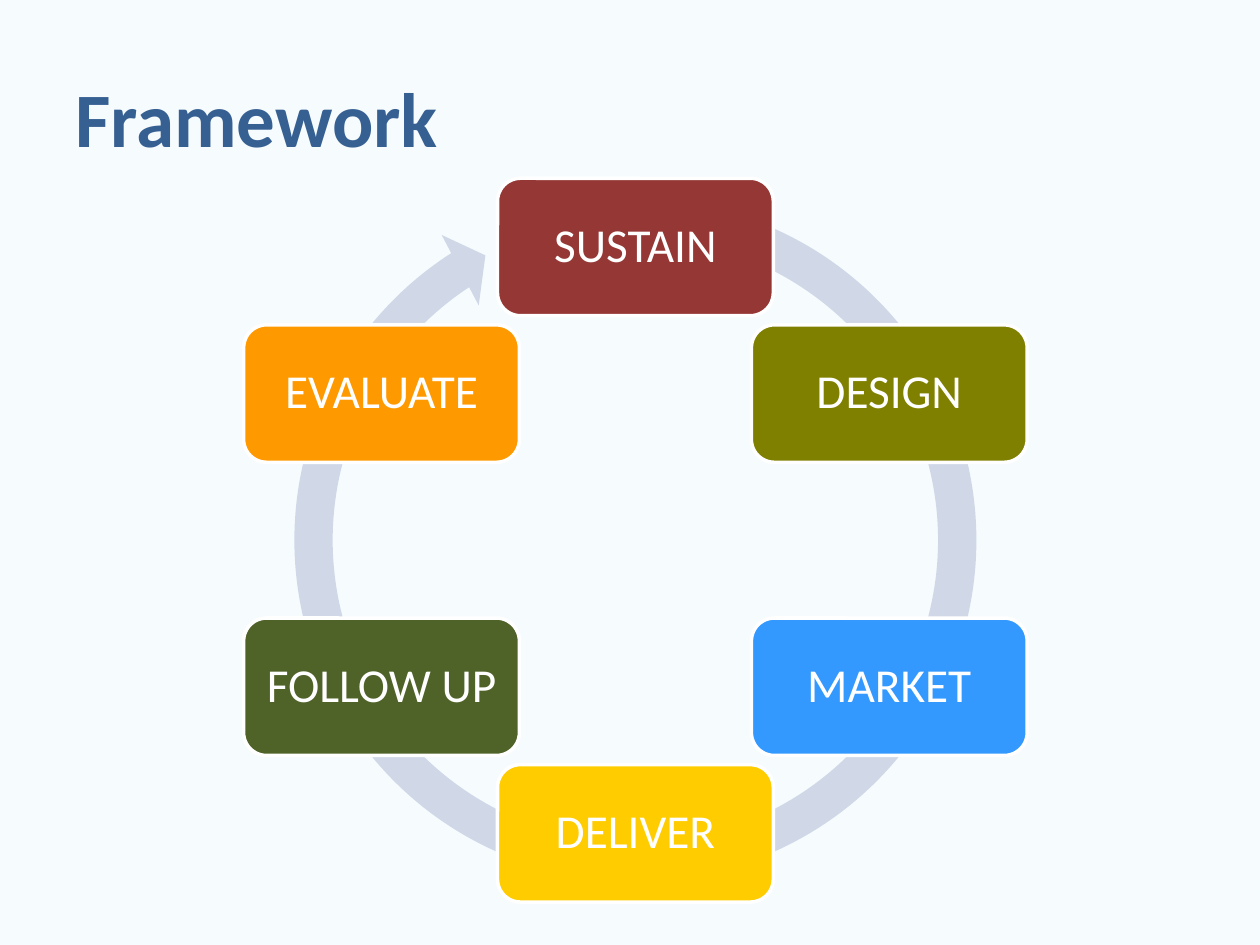
from math import cos, radians, sin

from pptx import Presentation
from pptx.dml.color import RGBColor
from pptx.enum.shapes import MSO_SHAPE
from pptx.enum.text import MSO_ANCHOR, PP_ALIGN
from pptx.util import Cm, Pt


def paint(fill, tone):
    fill.solid()
    fill.fore_color.rgb = RGBColor.from_string(tone)


def write(shape, text, size, tone, bold=False, align=PP_ALIGN.LEFT, space=1.0, inset=0.25):
    frame = shape.text_frame
    frame.word_wrap = True
    frame.vertical_anchor = MSO_ANCHOR.MIDDLE
    frame.margin_left = frame.margin_right = Cm(inset)
    para = frame.paragraphs[0]
    para.alignment = align
    para.line_spacing = space
    run = para.add_run()
    run.text = text
    run.font.name = "Calibri"
    run.font.size = Pt(size)
    run.font.bold = bold
    paint(run.font.fill, tone)


deck = Presentation()
deck.slide_width, deck.slide_height = Cm(25.4), Cm(19.05)
slide = deck.slides.add_slide(deck.slide_layouts[6])
paint(slide.background.fill, "F6FBFE")

title = slide.shapes.add_textbox(Cm(1.27), Cm(0.76), Cm(22.86), Cm(3.18))
write(title, "Framework", size=44, tone="376092", bold=True)

mid_x, mid_y = 12.81, 10.89
side = 14.58
ring = slide.shapes.add_shape(
    MSO_SHAPE.CIRCULAR_ARROW,
    Cm(mid_x - side / 2), Cm(mid_y - side / 2), Cm(side), Cm(side),
)
ring.shadow.inherit = False
paint(ring.fill, "D0D8E8")
ring.line.fill.background()
for i, value in enumerate([0.053, 3.126, 142.211, 171.312, 0.055]):
    ring.adjustments[i] = value

steps = [
    ("SUSTAIN", "953735"),
    ("DESIGN", "808000"),
    ("MARKET", "3399FF"),
    ("DELIVER", "FFCC00"),
    ("FOLLOW UP", "4F6228"),
    ("EVALUATE", "FF9900"),
]
wide, high, reach = 5.56, 2.77, 5.91
for i, (name, tone) in enumerate(steps):
    turn = radians(i * 360 / len(steps))
    left = mid_x + reach * sin(turn) - wide / 2
    top = mid_y - reach * cos(turn) - high / 2
    box = slide.shapes.add_shape(
        MSO_SHAPE.ROUNDED_RECTANGLE, Cm(left), Cm(top), Cm(wide), Cm(high)
    )
    box.shadow.inherit = False
    paint(box.fill, tone)
    paint(box.line.fill, "FFFFFF")
    box.line.width = Pt(2)
    write(box, name, size=27, tone="FFFFFF", align=PP_ALIGN.CENTER, space=0.9, inset=0.28)

deck.save("out.pptx")
